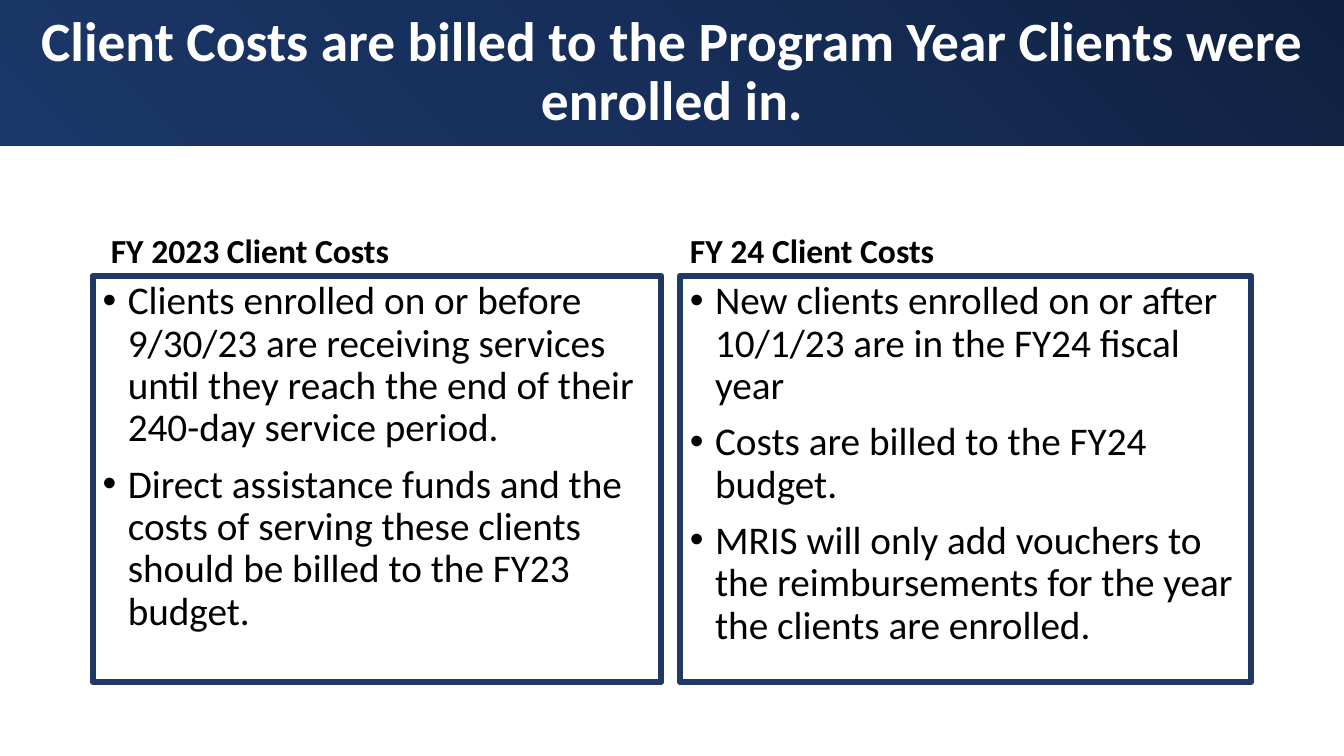
import copy
from dataclasses import dataclass

import lxml.etree
import pptx
import pptx.dml.color
import pptx.enum.shapes
import pptx.enum.text
import pptx.oxml.ns
import pptx.presentation
import pptx.shapes.autoshape
import pptx.slide
import pptx.text.text
import pptx.util

RGBColor = pptx.dml.color.RGBColor
BLACK = RGBColor(0x00, 0x00, 0x00)
WHITE = RGBColor(0xFF, 0xFF, 0xFF)
FRAME_NAVY = RGBColor(0x20, 0x38, 0x64)
BANNER_STOPS = (
    (0.0, RGBColor(0x10, 0x21, 0x3F)),
    (0.5, RGBColor(0x16, 0x2E, 0x59)),
    (1.0, RGBColor(0x1B, 0x37, 0x69)),
)
FONT = "Calibri"

# The slide is a grid of 100 columns by 100 rows
SLIDE_WIDTH = pptx.util.Inches(13.33)
SLIDE_HEIGHT = pptx.util.Inches(7.5)
BANNER_ROWS = 19.3
HEADING_TOP, HEADING_ROWS = 24.5, 12
DETAILS_ROWS = 53.7


@dataclass(frozen=True)
class Area:
    left: float
    top: float
    width: float
    height: float

    def lengths(self) -> tuple[int, int, int, int]:
        return (
            int(SLIDE_WIDTH * self.left / 100),
            int(SLIDE_HEIGHT * self.top / 100),
            int(SLIDE_WIDTH * self.width / 100),
            int(SLIDE_HEIGHT * self.height / 100),
        )


@dataclass(frozen=True)
class FiscalYear:
    left: float
    width: float
    heading: str
    heading_inset: float
    details: tuple[str, ...]


TITLE = "Client Costs are billed to the Program Year Clients were enrolled in."
FISCAL_YEARS = (
    FiscalYear(6.9, 42.3, "FY 2023 Client Costs", 0.18, (
        "Clients enrolled on or before 9/30/23 are receiving services until "
        "they reach the end of their 240-day service period.",
        "Direct assistance funds and the costs of serving these clients "
        "should be billed to the FY23 budget.",
    )),
    FiscalYear(50.6, 42.5, "FY 24 Client Costs", 0.1, (
        "New clients enrolled on or after 10/1/23 are in the FY24 fiscal year",
        "Costs are billed to the FY24 budget.",
        "MRIS will only add vouchers to the reimbursements for the year "
        "the clients are enrolled.",
    )),
)


def add_words(paragraph: pptx.text.text._Paragraph, words: str, size: float,
              color: RGBColor, bold: bool = False) -> None:
    paragraph.line_spacing = 0.9
    run = paragraph.add_run()
    run.text = words
    run.font.name = FONT
    run.font.size = pptx.util.Pt(size)
    run.font.bold = bold
    run.font.color.rgb = color


def add_bullet(paragraph: pptx.text.text._Paragraph) -> None:
    properties = paragraph._p.get_or_add_pPr()
    indent = pptx.util.Inches(0.25)
    properties.set("marL", str(indent))
    properties.set("indent", str(-indent))
    qn = pptx.oxml.ns.qn
    lxml.etree.SubElement(properties, qn("a:buFont"), typeface="Arial")
    lxml.etree.SubElement(properties, qn("a:buChar"), char="•")


def add_rectangle(slide: pptx.slide.Slide, area: Area) -> pptx.shapes.autoshape.Shape:
    rectangle = slide.shapes.add_shape(
        pptx.enum.shapes.MSO_SHAPE.RECTANGLE, *area.lengths())
    rectangle.shadow.inherit = False
    rectangle.text_frame.word_wrap = True
    return rectangle


def add_banner(slide: pptx.slide.Slide) -> None:
    banner = add_rectangle(slide, Area(0, 0, 100, BANNER_ROWS))
    banner.line.fill.background()

    # Gradient from the dark top right to the lighter bottom left
    banner.fill.gradient()
    banner.fill.gradient_angle = 225
    stop_list = banner._element.spPr.find(".//" + pptx.oxml.ns.qn("a:gsLst"))
    stop_list.append(copy.deepcopy(stop_list[-1]))
    for stop, (position, color) in zip(banner.fill.gradient_stops, BANNER_STOPS):
        stop.position = position
        stop.color.rgb = color

    banner.text_frame.vertical_anchor = pptx.enum.text.MSO_ANCHOR.MIDDLE
    title = banner.text_frame.paragraphs[0]
    title.alignment = pptx.enum.text.PP_ALIGN.CENTER
    add_words(title, TITLE, 39.6, WHITE, bold=True)


def add_heading(slide: pptx.slide.Slide, year: FiscalYear) -> None:
    area = Area(year.left, HEADING_TOP, year.width, HEADING_ROWS)
    frame = slide.shapes.add_textbox(*area.lengths()).text_frame
    frame.word_wrap = True
    frame.margin_left = pptx.util.Inches(year.heading_inset)
    frame.vertical_anchor = pptx.enum.text.MSO_ANCHOR.BOTTOM
    add_words(frame.paragraphs[0], year.heading, 24, BLACK, bold=True)


def add_details(slide: pptx.slide.Slide, year: FiscalYear) -> None:
    panel = add_rectangle(slide, Area(
        year.left, HEADING_TOP + HEADING_ROWS, year.width, DETAILS_ROWS))
    panel.fill.background()
    panel.line.color.rgb = FRAME_NAVY
    panel.line.width = pptx.util.Pt(4.5)
    outline = panel._element.spPr.find(pptx.oxml.ns.qn("a:ln"))
    lxml.etree.SubElement(outline, pptx.oxml.ns.qn("a:round"))

    frame = panel.text_frame
    frame.vertical_anchor = pptx.enum.text.MSO_ANCHOR.TOP
    for index, detail in enumerate(year.details):
        paragraph = frame.add_paragraph() if index else frame.paragraphs[0]
        add_bullet(paragraph)
        paragraph.alignment = pptx.enum.text.PP_ALIGN.LEFT
        if index:
            paragraph.space_before = pptx.util.Pt(10)
        add_words(paragraph, detail, 28, BLACK)


def main() -> None:
    deck = pptx.Presentation()
    deck.slide_width, deck.slide_height = SLIDE_WIDTH, SLIDE_HEIGHT
    slide = deck.slides.add_slide(deck.slide_layouts[6])

    # Title banner, then one column for each fiscal year
    add_banner(slide)
    for year in FISCAL_YEARS:
        add_heading(slide, year)
        add_details(slide, year)

    deck.save("out.pptx")


if __name__ == "__main__":
    main()
